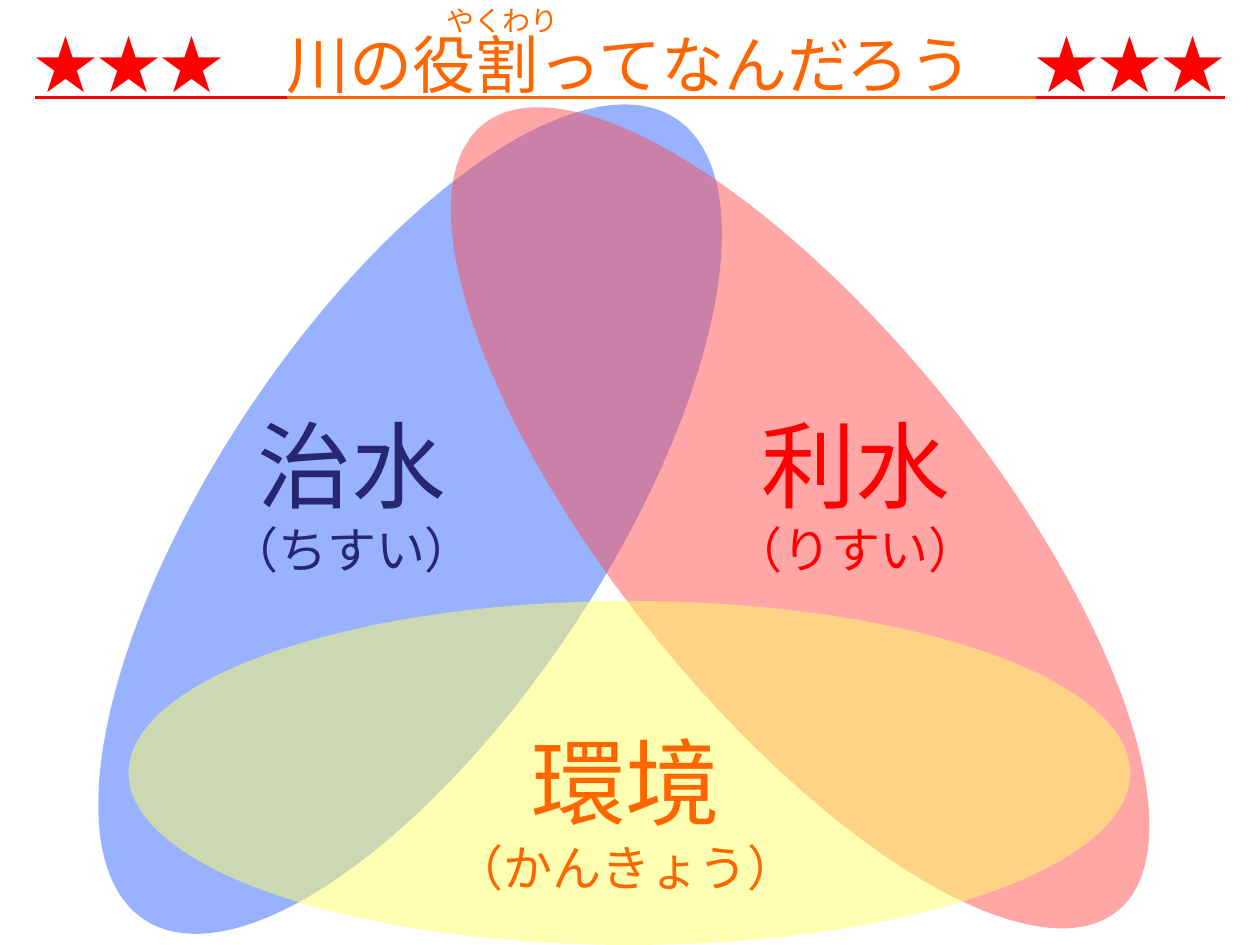
from dataclasses import dataclass

from lxml import etree
from pptx import Presentation
from pptx.dml.color import RGBColor
from pptx.enum.shapes import MSO_SHAPE
from pptx.enum.text import MSO_ANCHOR, PP_ALIGN
from pptx.oxml.ns import qn
from pptx.util import Inches, Pt

ELLIPSE = MSO_SHAPE.OVAL
TOP, MIDDLE = MSO_ANCHOR.TOP, MSO_ANCHOR.MIDDLE
CENTER = PP_ALIGN.CENTER


@dataclass(frozen=True)
class Theme:
    font: str = "Arial"
    blue: str = "3366FF"
    pink: str = "FF5050"
    yellow: str = "FFFF66"
    navy: str = "262673"
    red: str = "FF0000"
    orange: str = "FF6600"
    title: int = 36
    ruby: int = 16
    role: int = 54
    reading: int = 28


def add_text(para, text, *, font, size, color, bold=False, underline=False):
    span = para.add_run()
    span.text = text
    span.font.name = font
    span.font.size = Pt(size)
    span.font.bold = bold
    span.font.underline = underline
    span.font.color.rgb = RGBColor.from_string(color)


class VennSlide:
    """Draws the elements of a Venn diagram slide in one theme."""

    def __init__(self, page, theme):
        self.page = page
        self.theme = theme

    def ellipse(self, left, top, width, height, color, rotation=0):
        shape = self.page.shapes.add_shape(
            ELLIPSE, Inches(left), Inches(top), Inches(width), Inches(height))
        shape.rotation = rotation
        shape.shadow.inherit = False
        shape.line.fill.background()
        shape.fill.solid()
        shape.fill.fore_color.rgb = RGBColor.from_string(color)
        tint = shape.fill._xPr.find(qn("a:solidFill"))[0]
        etree.SubElement(tint, qn("a:alpha"), val="50000")

    def text_box(self, left, top, width, height, lines, anchor=TOP):
        box = self.page.shapes.add_textbox(
            Inches(left), Inches(top), Inches(width), Inches(height))
        frame = box.text_frame
        frame.word_wrap = True
        frame.vertical_anchor = anchor
        for index, spans in enumerate(lines):
            para = frame.add_paragraph() if index else frame.paragraphs[0]
            para.alignment = CENTER
            for text, style in spans:
                add_text(para, text, font=self.theme.font, **style)

    def title(self):
        theme = self.theme
        stars = dict(size=theme.title, color=theme.red, bold=True, underline=True)
        words = dict(size=theme.title, color=theme.orange, underline=True)
        self.text_box(0, 0.15, 10, 0.61, [[
            ("★★★　", stars), ("川の役割ってなんだろう　", words), ("★★★", stars)]])
        ruby = dict(size=theme.ruby, color=theme.orange)
        self.text_box(3.19, -0.02, 1.6, 0.46, [[("やくわり", ruby)]])

    def role(self, left, top, width, name, reading, color):
        theme = self.theme
        self.text_box(left, top, width, 1.42, [
            [(name, dict(size=theme.role, color=color))],
            [(reading, dict(size=theme.reading, color=color))]], MIDDLE)


def main():
    deck = Presentation()
    deck.slide_width, deck.slide_height = Inches(10), Inches(7.5)
    theme = Theme()
    venn = VennSlide(deck.slides.add_slide(deck.slide_layouts[6]), theme)
    venn.ellipse(-0.56, 2.57, 7.63, 3.1, theme.blue, 303.6)
    venn.title()
    venn.ellipse(2.34, 2.62, 8.02, 2.98, theme.pink, 51.1)
    venn.ellipse(1.02, 4.77, 7.95, 2.73, theme.yellow)
    venn.role(0.12, 5.72, 9.69, "環境", "（かんきょう）", theme.orange)
    venn.role(4.49, 3.2, 4.6, "利水", "（りすい）", theme.red)
    venn.role(0.35, 3.2, 4.88, "治水", "（ちすい）", theme.navy)
    deck.save("out.pptx")


if __name__ == "__main__":
    main()
